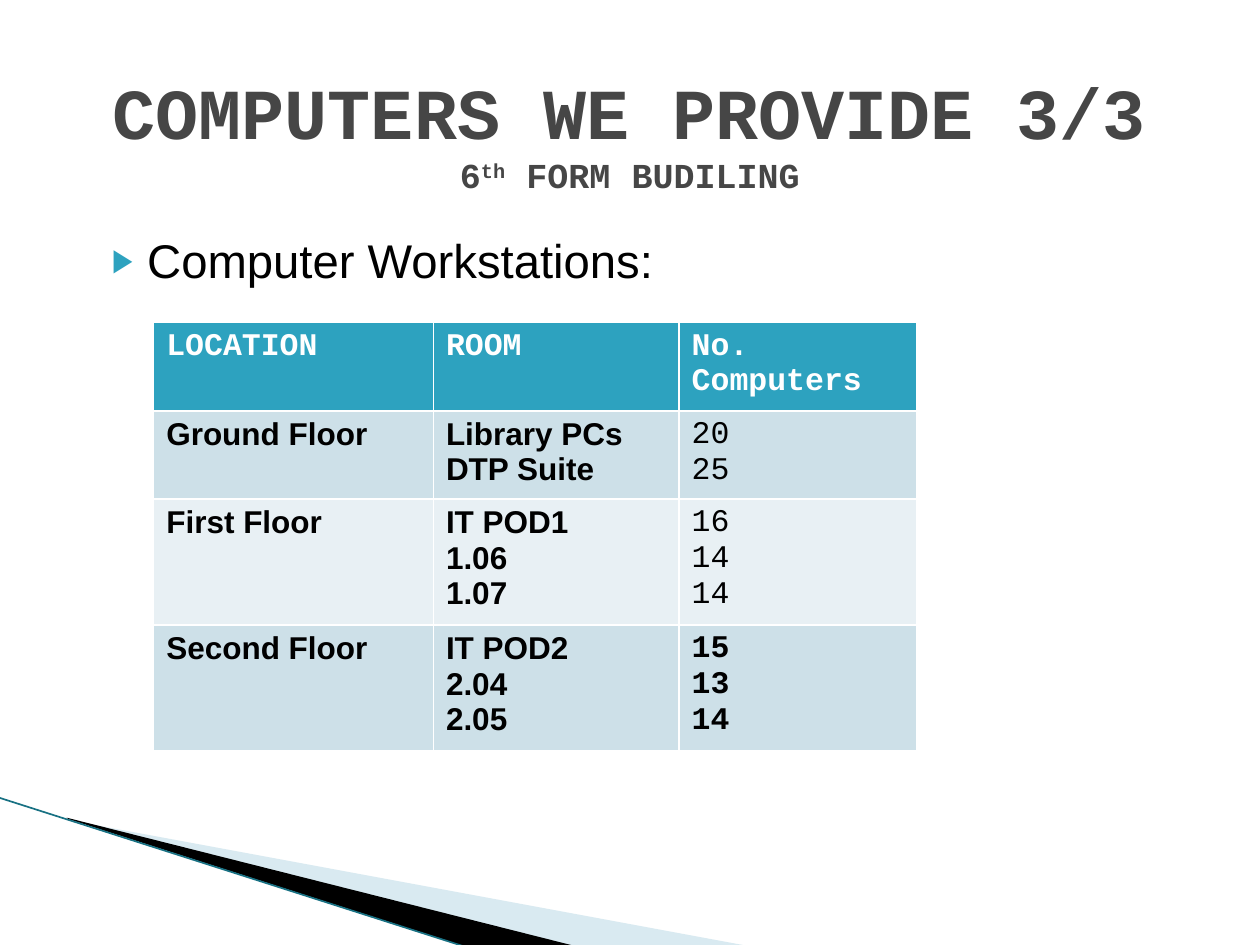
from typing import NamedTuple

from lxml import etree
from pptx import Presentation
from pptx.dml.color import RGBColor
from pptx.enum import shapes, text
from pptx.oxml import ns
from pptx.util import Inches, Pt

MONO, SANS = "Courier New", "Arial"
TEAL, GREY, BLACK, WHITE = "2DA2BF", "464646", "000000", "FFFFFF"
DARK_BAND, LIGHT_BAND = "CDE0E8", "E8F0F4"


class Wedge(NamedTuple):
    points: list[tuple[float, float]]
    color: str
    opacity: int


class Floor(NamedTuple):
    name: str
    rooms: list[str]
    counts: list[str]
    band: str
    bold_counts: bool = False


WEDGES = [
    Wedge([(0.55, 6.51), (5.95, 7.51), (4.56, 7.51), (0.55, 6.5)], "A0CBDC", 40),
    Wedge([(0.53, 6.49), (4.57, 7.51), (3.72, 7.52), (0.54, 6.5)], BLACK, 100),
]
HEADINGS = ["LOCATION", "ROOM", "No. Computers"]
COLUMN_WIDTHS = [2.22, 1.95, 1.89]
ROW_HEIGHT = 0.41
FLOORS = [
    Floor("Ground Floor", ["Library PCs", "DTP Suite"], ["20", "25"], DARK_BAND),
    Floor("First Floor", ["IT POD1", "1.06", "1.07"], ["16", "14", "14"], LIGHT_BAND),
    Floor("Second Floor", ["IT POD2", "2.04", "2.05"], ["15", "13", "14"], DARK_BAND, True),
]


def rgb(value: str) -> RGBColor:
    return RGBColor.from_string(value)


def add_xml(parent, tag: str, **attributes: str):
    return etree.SubElement(parent, ns.qn(tag), attributes)


def add_run(paragraph, words: str, size: float, face: str, color: str, bold: bool = False):
    run = paragraph.add_run()
    run.text = words
    run.font.size = Pt(size)
    run.font.name = face
    run.font.bold = bold
    run.font.color.rgb = rgb(color)
    return run


def add_frame(slide, left: float, top: float, width: float, height: float):
    frame = slide.shapes.add_textbox(
        Inches(left), Inches(top), Inches(width), Inches(height)
    ).text_frame
    frame.word_wrap = True
    return frame


def draw_wedge(slide, wedge: Wedge) -> None:
    start, *others = [(Inches(x), Inches(y)) for x, y in wedge.points]
    builder = slide.shapes.build_freeform(*start)
    builder.add_line_segments(others, close=True)
    shape = builder.convert_to_shape()
    shape.shadow.inherit = False
    shape.fill.solid()
    shape.fill.fore_color.rgb = rgb(wedge.color)
    shape.line.fill.background()
    if wedge.opacity < 100:
        tint = shape._element.spPr.find(".//" + ns.qn("a:srgbClr"))
        add_xml(tint, "a:alpha", val=str(wedge.opacity * 1000))


def draw_edge(slide) -> None:
    edge = slide.shapes.add_connector(
        shapes.MSO_CONNECTOR.STRAIGHT, Inches(-0.01), Inches(6.33), Inches(3.71), Inches(7.52)
    )
    edge.line.color.rgb = rgb("187183")
    edge.line.width = Pt(0.95)
    add_xml(edge._element.spPr, "a:effectLst")


def draw_title(slide) -> None:
    frame = add_frame(slide, 0.5, 0.3, 9, 1.49)
    frame.vertical_anchor = text.MSO_ANCHOR.MIDDLE
    title = frame.paragraphs[0]
    title.alignment = text.PP_ALIGN.CENTER
    add_run(title, "COMPUTERS WE PROVIDE 3/3", 41, MONO, GREY, True)
    title.add_line_break()
    add_run(title, "6", 20, MONO, GREY, True)
    ordinal = add_run(title, "th", 20, MONO, GREY, True)
    ordinal._r.get_or_add_rPr().set("baseline", "30000")
    add_run(title, " FORM BUDILING", 20, MONO, GREY, True)


def draw_bullet(slide) -> None:
    bullet = add_frame(slide, 0.67, 1.79, 9, 0.6).paragraphs[0]
    properties = bullet._p.get_or_add_pPr()
    properties.set("marL", str(Inches(0.4)))
    properties.set("indent", str(Inches(-0.28)))
    add_xml(add_xml(properties, "a:buClr"), "a:srgbClr", val=TEAL)
    add_xml(properties, "a:buSzPct", val="68000")
    add_xml(properties, "a:buFont", typeface=SANS)
    add_xml(properties, "a:buChar", char="▶")
    add_run(bullet, "Computer Workstations:", 27, SANS, BLACK)


def fill_cell(cell, lines: list[str], face: str, color: str, bold: bool, band: str) -> None:
    frame = cell.text_frame
    for index, line in enumerate(lines):
        paragraph = frame.add_paragraph() if index else frame.paragraphs[0]
        add_run(paragraph, line, 18, face, color, bold)
    cell.fill.solid()
    cell.fill.fore_color.rgb = rgb(band)


def draw_table(slide) -> None:
    row_count = len(FLOORS) + 1
    table = slide.shapes.add_table(
        row_count, len(HEADINGS), Inches(1.22), Inches(2.56),
        Inches(sum(COLUMN_WIDTHS)), Inches(ROW_HEIGHT * row_count),
    ).table
    for column, width in zip(table.columns, COLUMN_WIDTHS):
        column.width = Inches(width)
    for column, heading in enumerate(HEADINGS):
        fill_cell(table.cell(0, column), [heading], MONO, WHITE, True, TEAL)
    for row, floor in enumerate(FLOORS, 1):
        fill_cell(table.cell(row, 0), [floor.name], SANS, BLACK, True, floor.band)
        fill_cell(table.cell(row, 1), floor.rooms, SANS, BLACK, True, floor.band)
        fill_cell(table.cell(row, 2), floor.counts, MONO, BLACK, floor.bold_counts, floor.band)


def main() -> None:
    deck = Presentation()
    deck.slide_width, deck.slide_height = Inches(10), Inches(7.5)
    slide = deck.slides.add_slide(deck.slide_layouts[6])
    for wedge in WEDGES:
        draw_wedge(slide, wedge)
    draw_edge(slide)
    draw_title(slide)
    draw_bullet(slide)
    draw_table(slide)
    deck.save("out.pptx")


if __name__ == "__main__":
    main()
